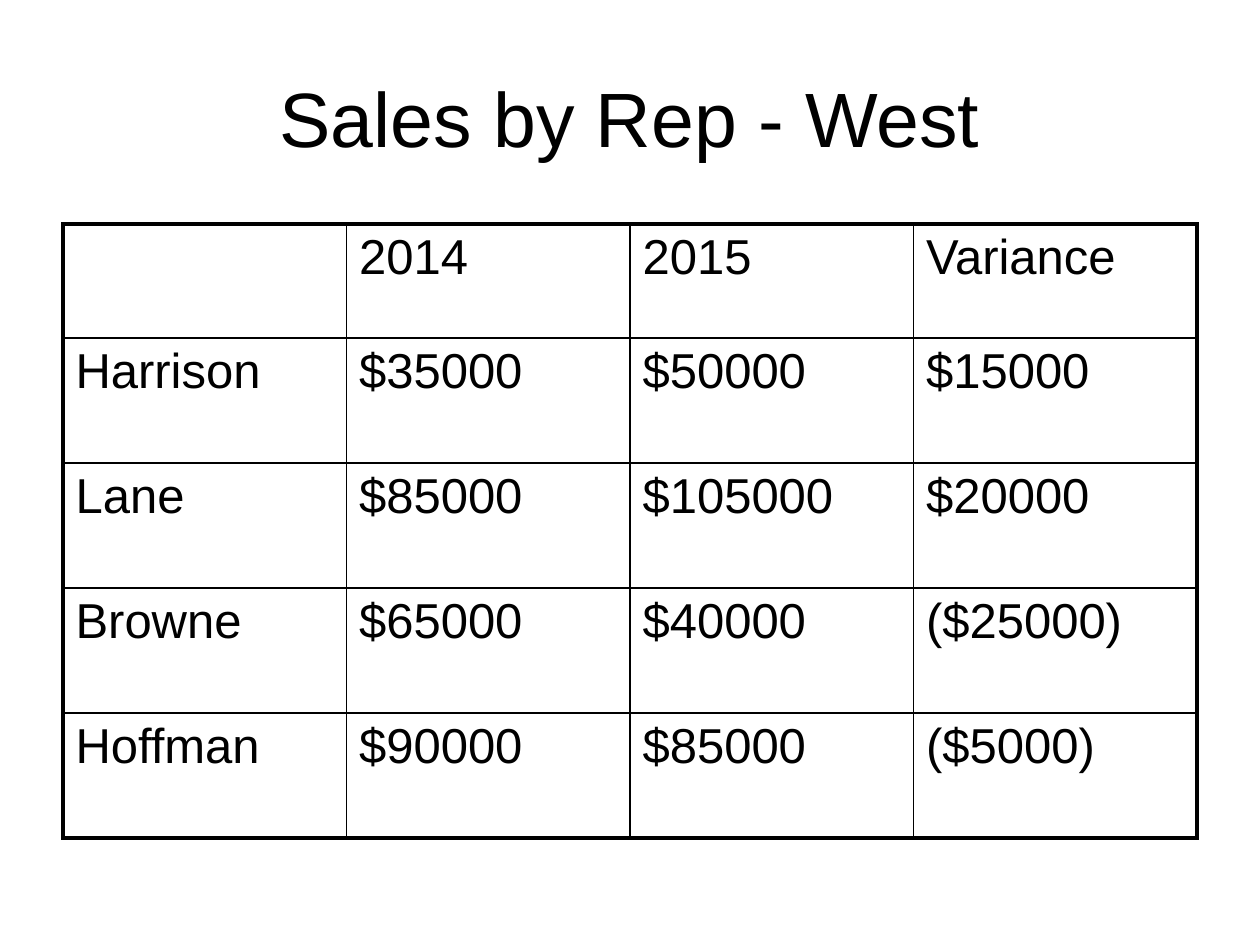
from lxml.etree import SubElement
from pptx import Presentation
from pptx.dml.color import RGBColor
from pptx.enum.text import MSO_ANCHOR, PP_ALIGN
from pptx.oxml.ns import qn
from pptx.util import Emu, Pt

SCALE = 914400 / 126
FONT = "Arial"
COLORS = {"text": "000000", "line": "000000"}
THIN, THICK = 1, 2.25
HEAD, BODY = 114, 125
SALES = [
    ["", "2014", "2015", "Variance"],
    ["Harrison", "$35000", "$50000", "$15000"],
    ["Lane", "$85000", "$105000", "$20000"],
    ["Browne", "$65000", "$40000", "($25000)"],
    ["Hoffman", "$90000", "$85000", "($5000)"],
]


def px(n):
    return Emu(round(n * SCALE))


def add_run(para, text, size):
    run = para.add_run()
    run.text = text
    run.font.name = FONT
    run.font.size = Pt(size)
    run.font.color.rgb = RGBColor.from_string(COLORS["text"])


def add_title(slide, text):
    box = slide.shapes.add_textbox(px(63), px(38), px(1134), px(157))
    frame = box.text_frame
    frame.word_wrap = True
    frame.vertical_anchor = MSO_ANCHOR.MIDDLE
    para = frame.paragraphs[0]
    para.alignment = PP_ALIGN.CENTER
    add_run(para, text, 44)


def set_edge(cell, side, width):
    props = cell._tc.get_or_add_tcPr()
    line = SubElement(props, qn(f"a:ln{side}"), w=str(Pt(width)))
    fill = SubElement(line, qn("a:solidFill"))
    SubElement(fill, qn("a:srgbClr"), val=COLORS["line"])


def add_table(slide, data):
    """Draw the grid with thin inner rules and a thick outer frame."""
    rows, cols = len(data), len(data[0])
    high = HEAD + BODY * (rows - 1)
    frame = slide.shapes.add_table(rows, cols, px(63), px(224), px(1134), px(high))
    table = frame.table
    table.first_row = table.horz_banding = False
    for r, values in enumerate(data):
        table.rows[r].height = px(BODY if r else HEAD)
        for c, text in enumerate(values):
            cell = table.cell(r, c)
            outer = {"L": c == 0, "R": c == cols - 1, "T": r == 0, "B": r == rows - 1}
            for side, edge in outer.items():
                set_edge(cell, side, THICK if edge else THIN)
            cell.fill.background()
            if text:
                add_run(cell.text_frame.paragraphs[0], text, 28)


def main():
    deck = Presentation()
    deck.slide_width, deck.slide_height = px(1260), px(945)
    slide = deck.slides.add_slide(deck.slide_layouts[6])
    add_title(slide, "Sales by Rep - West")
    add_table(slide, SALES)
    deck.save("out.pptx")


if __name__ == "__main__":
    main()
